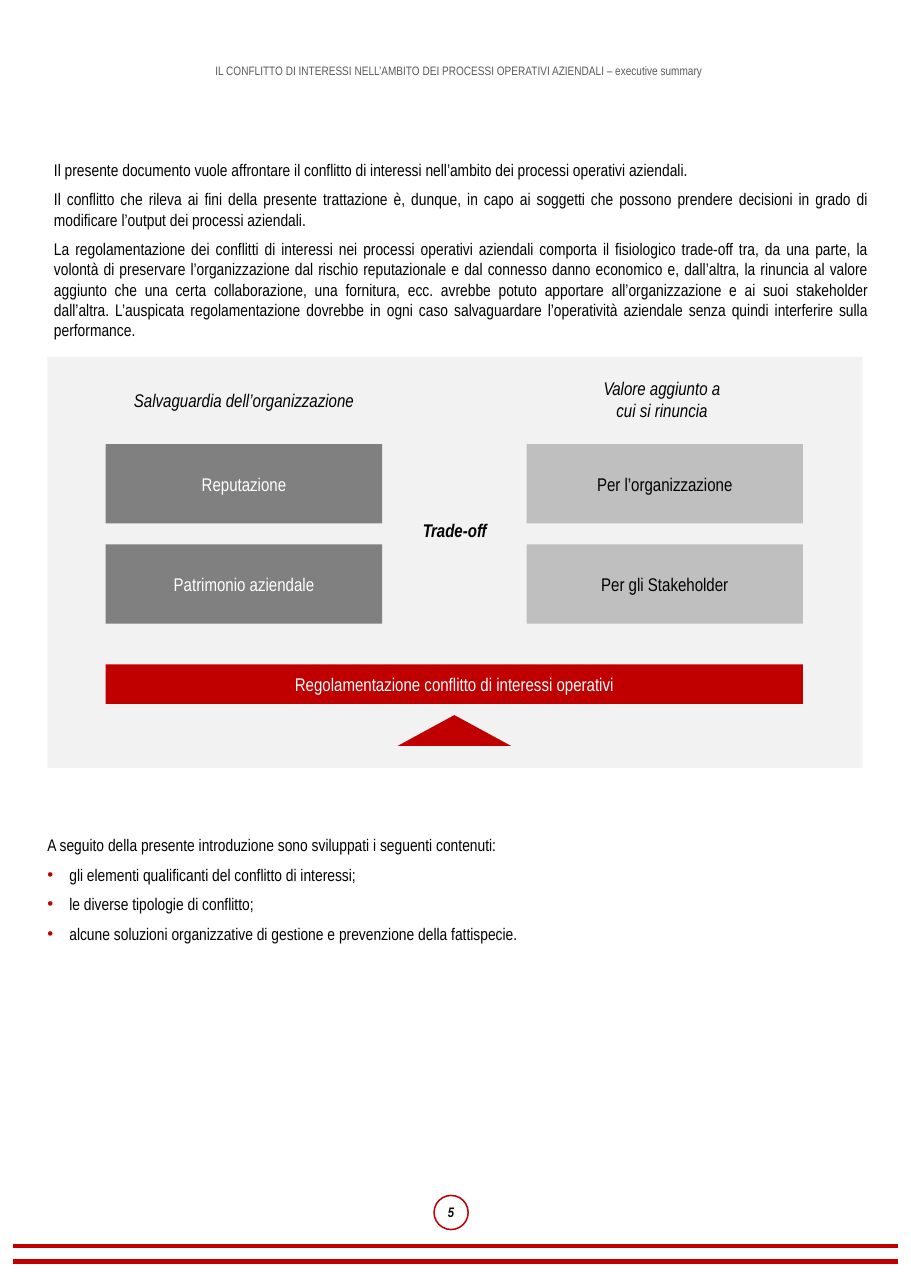
from lxml.etree import SubElement
from pptx import Presentation
from pptx.dml.color import RGBColor
from pptx.enum.shapes import MSO_CONNECTOR, MSO_SHAPE
from pptx.enum.text import MSO_ANCHOR, PP_ALIGN
from pptx.oxml.ns import qn
from pptx.util import Pt

PX = 9144  # EMU per px, 100 px to the inch

RED = RGBColor(0xC0, 0x00, 0x00)
WHITE = RGBColor(0xFF, 0xFF, 0xFF)
BLACK = RGBColor(0x00, 0x00, 0x00)
NEAR_BLACK = RGBColor(0x0D, 0x0D, 0x0D)
HEADER_GRAY = RGBColor(0x59, 0x59, 0x59)
DARK_GRAY = RGBColor(0x80, 0x80, 0x80)
MID_GRAY = RGBColor(0xBF, 0xBF, 0xBF)
PANEL_GRAY = RGBColor(0xF2, 0xF2, 0xF2)

INTRODUCTION = [
    "Il presente documento vuole affrontare il conflitto di interessi nell’ambito dei processi "
    "operativi aziendali.",
    "Il conflitto che rileva ai fini della presente trattazione è, dunque, in capo ai soggetti che "
    "possono prendere decisioni in grado di modificare l’output dei processi aziendali.",
    "La regolamentazione dei conflitti di interessi nei processi operativi aziendali comporta il "
    "fisiologico trade-off tra, da una parte, la volontà di preservare l’organizzazione dal rischio "
    "reputazionale e dal connesso danno economico e, dall’altra, la rinuncia al valore aggiunto che "
    "una certa collaborazione, una fornitura, ecc. avrebbe potuto apportare all’organizzazione e ai "
    "suoi stakeholder dall’altra. L’auspicata regolamentazione dovrebbe in ogni caso salvaguardare "
    "l’operatività aziendale senza quindi interferire sulla performance.",
]
CONTENTS_LEAD = "A seguito della presente introduzione sono sviluppati i seguenti contenuti:"
CONTENTS = [
    "gli elementi qualificanti del conflitto di interessi;",
    "le diverse tipologie di conflitto;",
    "alcune soluzioni organizzative di gestione e prevenzione della fattispecie.",
]


class PageBuilder:
    font_name = "Arial Narrow"

    def __init__(self, deck):
        self.page = deck.slides.add_slide(deck.slide_layouts[6])

    def fill_text(self, box, lines, size=12, color=BLACK, align=PP_ALIGN.CENTER,
                  anchor=MSO_ANCHOR.TOP, insets=(10, 5, 10, 5), space_after=0, **style):
        frame = box.text_frame
        frame.word_wrap = True
        frame.vertical_anchor = anchor
        for side, inset in zip(("left", "top", "right", "bottom"), insets):
            setattr(frame, f"margin_{side}", inset * PX)
        font_values = {"name": self.font_name, "size": Pt(size), **style}
        for index, line in enumerate(lines):
            para = frame.paragraphs[0] if index == 0 else frame.add_paragraph()
            para.alignment = align
            para.space_after = Pt(space_after)
            span = para.add_run()
            span.text = line
            for name, value in font_values.items():
                setattr(span.font, name, value)
            span.font.color.rgb = color
        return frame.paragraphs

    def text(self, place, lines, **style):
        box = self.page.shapes.add_textbox(*(length * PX for length in place))
        return self.fill_text(box, lines, **style)

    def body(self, place, lines):
        return self.text(place, lines, size=11, align=PP_ALIGN.JUSTIFY,
                         insets=(0, 0, 0, 0), space_after=6)

    def shape(self, kind, place, fill=None, outline=None, label=None, **style):
        box = self.page.shapes.add_shape(kind, *(length * PX for length in place))
        box.shadow.inherit = False
        if fill is None:
            box.fill.background()
        else:
            box.fill.solid()
            box.fill.fore_color.rgb = fill
        if outline is None:
            box.line.fill.background()
        else:
            box.line.color.rgb = outline
            box.line.width = Pt(1)
        if label:
            self.fill_text(box, [label], anchor=MSO_ANCHOR.MIDDLE, **style)

    def rule(self, left, right, y):
        line = self.page.shapes.add_connector(
            MSO_CONNECTOR.STRAIGHT, left * PX, y * PX, right * PX, y * PX)
        line.line.color.rgb = RED
        line.line.width = Pt(3)
        SubElement(line._element.spPr, qn("a:effectLst"))

    def bullet(self, para, indent=20):
        properties = para._p.get_or_add_pPr()
        properties.set("marL", str(indent * PX))
        properties.set("indent", str(-indent * PX))
        bullet_color = SubElement(properties, qn("a:buClr"))
        SubElement(bullet_color, qn("a:srgbClr"), val=str(RED))
        SubElement(properties, qn("a:buFont"), typeface="Arial")
        SubElement(properties, qn("a:buChar"), char="•")


def main():
    deck = Presentation()
    deck.slide_width, deck.slide_height = 827 * PX, 1169 * PX
    builder = PageBuilder(deck)

    # Header and page number
    builder.text(
        (43, 44, 740, 40),
        ["IL CONFLITTO DI INTERESSI NELL’AMBITO DEI PROCESSI OPERATIVI AZIENDALI – executive summary"],
        size=8, color=HEADER_GRAY, anchor=MSO_ANCHOR.MIDDLE, insets=(8, 0, 0, 0))
    builder.shape(MSO_SHAPE.OVAL, (394, 1085, 31, 31), outline=RED, label="5", size=9,
                  color=NEAR_BLACK, insets=(0, 0, 0, 0), bold=True, italic=True)

    # Trade-off panel: two columns of boxes
    builder.shape(MSO_SHAPE.RECTANGLE, (43, 324, 740, 373), PANEL_GRAY)
    columns = [
        (96, DARK_GRAY, WHITE, ["Reputazione", "Patrimonio aziendale"]),
        (478, MID_GRAY, BLACK, ["Per l’organizzazione", "Per gli Stakeholder"]),
    ]
    for left, fill, color, labels in columns:
        for row, label in enumerate(labels):
            builder.shape(MSO_SHAPE.RECTANGLE, (left, 403 + 91 * row, 251, 72), fill,
                          label=label, color=color)

    # Balance beam and pivot
    builder.shape(MSO_SHAPE.RECTANGLE, (96, 603, 633, 36), RED, color=WHITE,
                  label="Regolamentazione conflitto di interessi operativi")
    builder.shape(MSO_SHAPE.ISOSCELES_TRIANGLE, (361, 649, 103, 28), RED)

    # Panel headings
    builder.text((96, 348, 251, 34), ["Salvaguardia dell’organizzazione"], italic=True)
    builder.text((478, 337, 246, 57), ["Valore aggiunto a", "cui si rinuncia"], italic=True)
    builder.text((348, 466, 130, 34), ["Trade-off"], bold=True, italic=True)

    # Contents list
    paragraphs = builder.body((43, 758, 740, 133), [CONTENTS_LEAD, *CONTENTS])
    for para in paragraphs[1:]:
        builder.bullet(para)

    # Footer rules
    for y in (1131, 1145):
        builder.rule(12, 815, y)

    # Introduction
    builder.body((49, 145, 740, 296), INTRODUCTION)

    deck.save("out.pptx")


if __name__ == "__main__":
    main()
